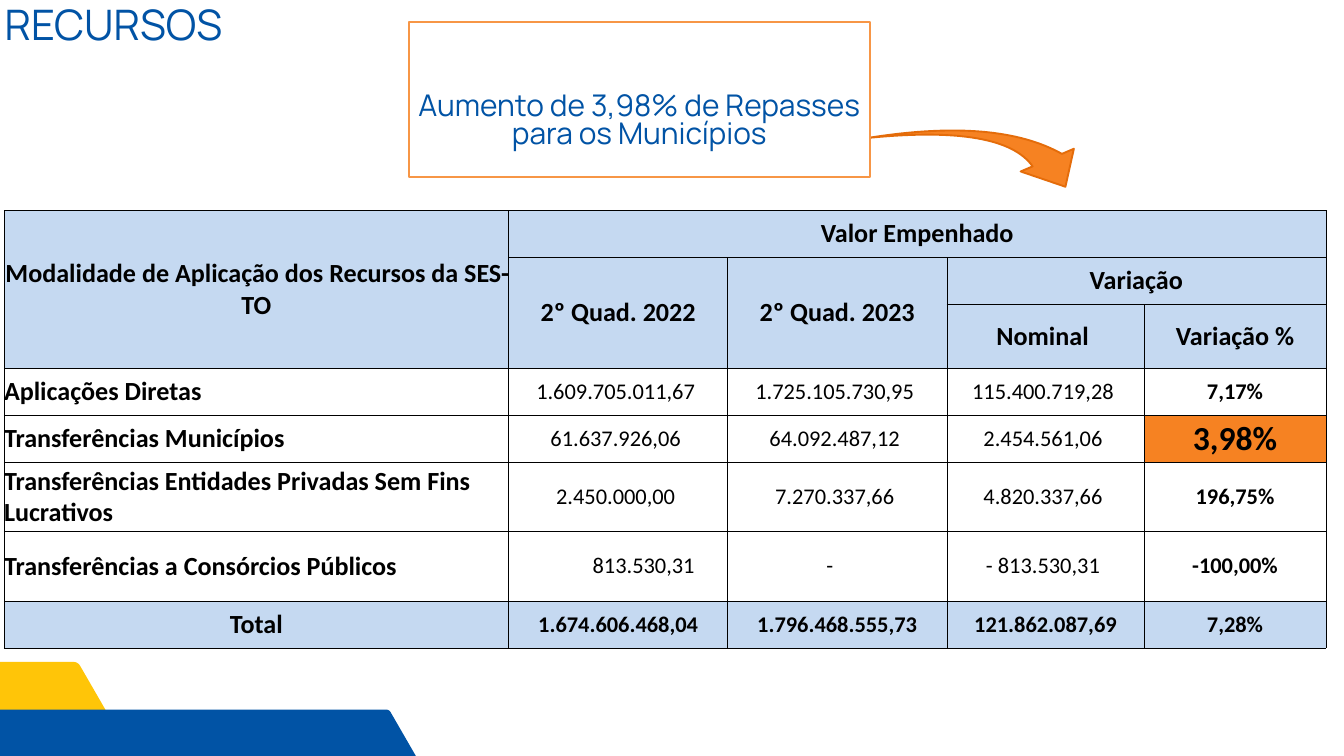
import math

import lxml.etree
import pptx
import pptx.dml.color
import pptx.enum.shapes
import pptx.enum.text
import pptx.oxml.ns
import pptx.util

Pt = pptx.util.Pt
ALIGN = pptx.enum.text.PP_ALIGN
ANCHOR = pptx.enum.text.MSO_ANCHOR
SHAPE = pptx.enum.shapes.MSO_SHAPE

BLUE, YELLOW, ORANGE = "0153A5", "FFC508", "F68222"
HEADER, BLACK, WHITE = "C5D9F1", "000000", "FFFFFF"

COLUMNS = [540.7, 234.7, 234.7, 211.7, 194.4]
ROWS = [50.4] * 5 + [74.2] * 2 + [50.4]
HEADINGS = [
    (0, 0, 2, 0, "Modalidade de Aplicação dos Recursos da SES-TO"),
    (0, 1, 0, 4, "Valor Empenhado"),
    (1, 1, 2, 1, "2º Quad. 2022"),
    (1, 2, 2, 2, "2º Quad. 2023"),
    (1, 3, 1, 4, "Variação"),
    (2, 3, 2, 3, "Nominal "),
    (2, 4, 2, 4, " Variação % "),
]
BODY = [
    ("Aplicações Diretas", "1.609.705.011,67 ", "1.725.105.730,95 ", "115.400.719,28 ", "7,17%"),
    ("Transferências Municípios", "61.637.926,06 ", "64.092.487,12 ", "2.454.561,06 ", "3,98%"),
    ("Transferências Entidades Privadas Sem Fins Lucrativos",
     "2.450.000,00 ", "7.270.337,66 ", "4.820.337,66 ", "196,75%"),
    ("Transferências a Consórcios Públicos", "813.530,31 ", "-", "- 813.530,31 ", "-100,00%"),
    ("Total", " 1.674.606.468,04 ", " 1.796.468.555,73 ", " 121.862.087,69 ", "7,28%"),
]


def color(value):
    return pptx.dml.color.RGBColor.from_string(value)


def write(frame, text, size=24, font="Calibri", ink=BLACK, bold=False,
          align=ALIGN.CENTER, anchor=ANCHOR.MIDDLE, spacing=None, insets=(0, 0, 0, 0)):
    frame.word_wrap = True
    frame.vertical_anchor = anchor
    frame.margin_left, frame.margin_top, frame.margin_right, frame.margin_bottom = map(Pt, insets)
    para = frame.paragraphs[0]
    para.alignment = align
    if spacing:
        para.line_spacing = spacing
    span = para.add_run()
    span.text = text
    span.font.size = Pt(size)
    span.font.name = font
    span.font.bold = bold
    span.font.color.rgb = color(ink)


class Page:
    heading_font = "Manrope"

    def __init__(self, deck):
        self.slide = deck.slides.add_slide(deck.slide_layouts[5])
        self.shapes = self.slide.shapes

    def title(self, text, left, top, width, height):
        box = self.shapes.title
        box.left, box.top, box.width, box.height = map(Pt, (left, top, width, height))
        box.text_frame.auto_size = pptx.enum.text.MSO_AUTO_SIZE.NONE
        write(box.text_frame, text, size=45, font=self.heading_font, ink=BLUE,
              align=ALIGN.LEFT, anchor=ANCHOR.TOP, spacing=Pt(49.5))

    def paint(self, shape, fill, line=None):
        shape.shadow.inherit = False
        shape.fill.solid()
        shape.fill.fore_color.rgb = color(fill)
        if line:
            shape.line.color.rgb = color(line)
            shape.line.width = Pt(2)
        else:
            shape.line.fill.background()

    def preset(self, kind, left, top, width, height, fill, line):
        shape = self.shapes.add_shape(kind, *map(Pt, (left, top, width, height)))
        self.paint(shape, fill, line)
        return shape

    def hexagon(self, left, top, width, height, corner, fill):
        slant = height / 2 * math.tan(math.radians(30))
        right, middle, bottom = left + width, top + height / 2, top + height
        tips = [(left, middle), (left + slant, top), (right - slant, top),
                (right, middle), (right - slant, bottom), (left + slant, bottom)]
        points = []
        for index, tip in enumerate(tips):
            ends = []
            for other in (tips[index - 1], tips[(index + 1) % 6]):
                part = corner / math.dist(tip, other)
                ends.append([a + (b - a) * part for a, b in zip(tip, other)])
            for step in range(7):
                t = step / 6
                points.append([Pt((1 - t) ** 2 * a + 2 * t * (1 - t) * b + t ** 2 * c)
                               for a, b, c in zip(ends[0], tip, ends[1])])
        outline = self.shapes.build_freeform(*points[0])
        outline.add_line_segments(points[1:], close=True)
        self.paint(outline.convert_to_shape(), fill)

    def table(self, left, top, columns, rows):
        frame = self.shapes.add_table(len(rows), len(columns), Pt(left), Pt(top),
                                      Pt(sum(columns)), Pt(sum(rows)))
        grid = frame.table
        grid.first_row = grid.horz_banding = False
        for column, width in zip(grid.columns, columns):
            column.width = Pt(width)
        for row, height in zip(grid.rows, rows):
            row.height = Pt(height)
        for cell in grid.iter_cells():
            self.border(cell)
            cell.fill.background()
        return grid

    def border(self, cell):
        properties = cell._tc.get_or_add_tcPr()
        for side in ("lnL", "lnR", "lnT", "lnB"):
            line = lxml.etree.SubElement(properties, pptx.oxml.ns.qn("a:" + side), w=str(Pt(0.5)))
            fill = lxml.etree.SubElement(line, pptx.oxml.ns.qn("a:solidFill"))
            lxml.etree.SubElement(fill, pptx.oxml.ns.qn("a:srgbClr"), val=BLACK)

    def cell(self, cell, text, fill=None, insets=(0, 0, 0, 0), **style):
        if fill:
            cell.fill.solid()
            cell.fill.fore_color.rgb = color(fill)
        write(cell.text_frame, text, **style)
        cell.vertical_anchor = ANCHOR.MIDDLE
        cell.margin_left, cell.margin_top, cell.margin_right, cell.margin_bottom = map(Pt, insets)


def fill_table(page, grid):
    for top, left, bottom, right, text in HEADINGS:
        cell = grid.cell(top, left)
        if (top, left) != (bottom, right):
            cell.merge(grid.cell(bottom, right))
        page.cell(cell, text, fill=HEADER, size=28, bold=True)

    shifts = {"813.530,31 ": (60, 0, 0, 0), "-": (0, 0, 16, 0)}
    for row, record in enumerate(BODY, start=3):
        total = record[0] == "Total"
        for column, text in enumerate(record):
            highlight = text == "3,98%"
            label = column == 0
            page.cell(
                grid.cell(row, column), text,
                fill=ORANGE if highlight else HEADER if total else None,
                size=36 if highlight else 28 if label else 24,
                bold=total or column in (0, 4),
                align=ALIGN.LEFT if label and not total else ALIGN.CENTER,
                insets=shifts.get(text, (0, 0, 0, 0)))


def main():
    deck = pptx.Presentation()
    deck.slide_width, deck.slide_height = Pt(1440), Pt(810)
    page = Page(deck)
    page.hexagon(-196.9, 709.2, 329.8, 171.4, 5, YELLOW)
    page.hexagon(-175.5, 760.3, 659.7, 233.3, 3.4, BLUE)
    page.title("RECURSOS", 5, 2.9, 277, 103.7)
    fill_table(page, page.table(4.3, 225.4, COLUMNS, ROWS))

    arrow = page.preset(SHAPE.SWOOSH_ARROW, 990, 67, 110.9, 208.1, ORANGE, "E46C0A")
    arrow.rotation = 73.3
    arrow.adjustments[0], arrow.adjustments[1] = 0.163, 0.314
    callout = page.preset(SHAPE.RECTANGLE, 437.8, 23.8, 494.6, 165.6, WHITE, "F79646")
    write(callout.text_frame, "Aumento de 3,98% de Repasses para os Municípios", size=32,
          font=page.heading_font, ink=BLUE, anchor=ANCHOR.BOTTOM, spacing=0.79,
          insets=(2.9, 2.9, 2.9, 28))
    deck.save("out.pptx")


if __name__ == "__main__":
    main()
